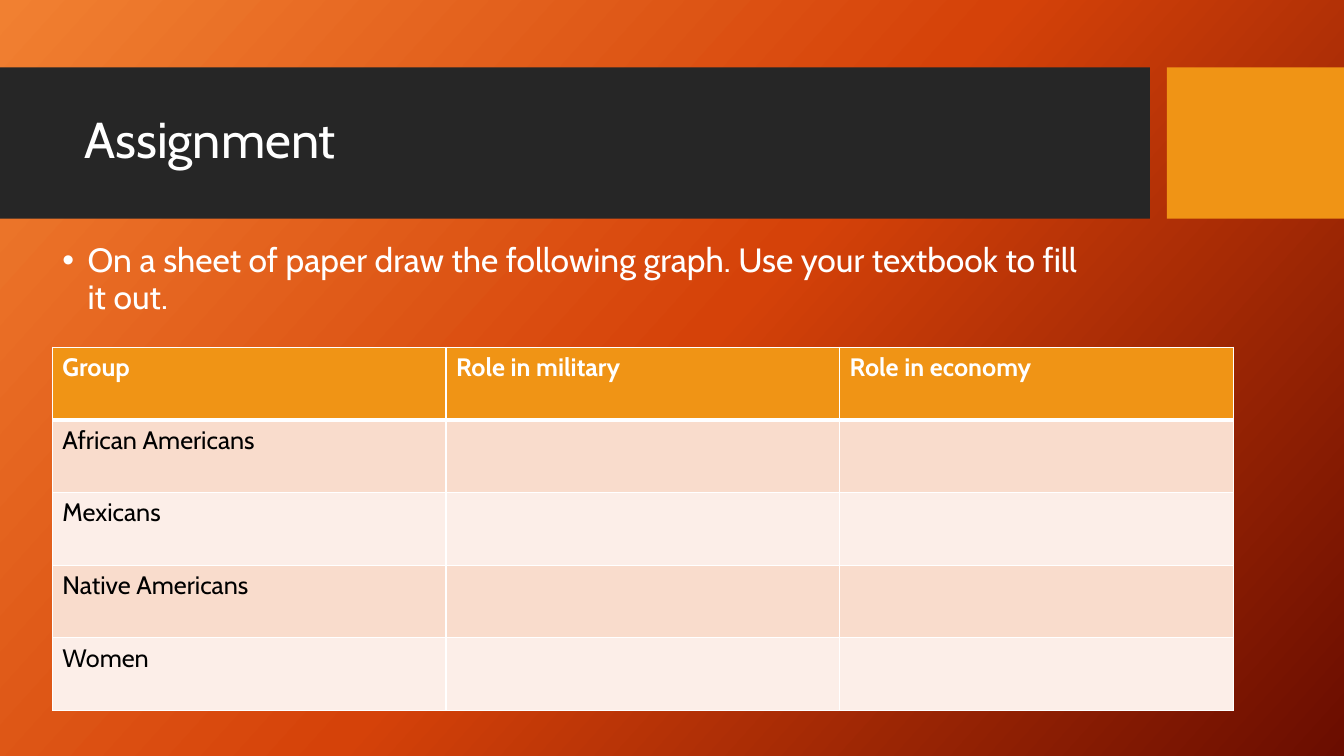
from lxml.etree import SubElement
from pptx import Presentation
from pptx.dml.color import RGBColor
from pptx.enum.shapes import MSO_SHAPE
from pptx.enum.text import MSO_ANCHOR
from pptx.oxml import parse_xml
from pptx.oxml.ns import nsdecls, qn
from pptx.util import Cm, Pt

TITLE = "Assignment"
TASK = "On a sheet of paper draw the following graph. Use your textbook to fill it out."
ROWS = [
    ("Group", "Role in military", "Role in economy"),
    ("African Americans", "", ""),
    ("Mexicans", "", ""),
    ("Native Americans", "", ""),
    ("Women", "", ""),
]
FONT = "Cabin"
COLORS = {
    "white": "FFFFFF", "black": "000000", "band": "262626", "accent": "F09415",
    "odd": "F9DCCC", "even": "FCEEE8",
}
GRADIENT = [(0, "F18031"), (50, "D54209"), (100, "6A0D00")]
GRADIENT_ANGLE = 42
SLIDE_W, SLIDE_H = 33.87, 19.05
BAND_TOP, BAND_H, BAND_W, ACCENT_X = 1.7, 3.81, 28.98, 29.41
TABLE_X, TABLE_Y, COL_W, ROW_H = 1.32, 8.75, 9.92, 1.83


def color(name):
    return RGBColor.from_string(COLORS[name])


def add_run(p, text, size, name, bold=False):
    r = p.add_run()
    r.text = text
    r.font.size = Pt(size)
    r.font.name = FONT
    r.font.bold = bold
    r.font.color.rgb = color(name)


def add_text(s, box, text, size, anchor):
    tf = s.shapes.add_textbox(*map(Cm, box)).text_frame
    tf.word_wrap = True
    tf.vertical_anchor = anchor
    p = tf.paragraphs[0]
    p.line_spacing = 0.9
    add_run(p, text, size, "white")
    return p


def add_bullet(p):
    pPr = p._p.get_or_add_pPr()
    pPr.set("marL", str(Cm(0.64)))
    pPr.set("indent", str(-Cm(0.64)))
    SubElement(pPr, qn("a:buFont")).set("typeface", "Arial")
    SubElement(pPr, qn("a:buChar")).set("char", "•")


def set_background(s):
    s.background.fill.gradient()
    grad = s.element.find(".//" + qn("a:gradFill"))
    stops = grad.find(qn("a:gsLst"))
    for gs in list(stops):
        stops.remove(gs)
    for pos, rgb in GRADIENT:
        gs = SubElement(stops, qn("a:gs"))
        gs.set("pos", str(pos * 1000))
        SubElement(gs, qn("a:srgbClr")).set("val", rgb)
    grad.find(qn("a:lin")).set("ang", str(GRADIENT_ANGLE * 60000))


def set_borders(cell, widths):
    tcPr = cell._tc.get_or_add_tcPr()
    for i, (side, width) in enumerate(widths.items()):
        tcPr.insert(i, parse_xml(
            f'<a:ln{side} {nsdecls("a")} w="{Pt(width)}"><a:solidFill>'
            f'<a:srgbClr val="{COLORS["white"]}"/></a:solidFill></a:ln{side}>'))


def add_grid(s):
    n_rows, n_cols = len(ROWS), len(ROWS[0])
    table = s.shapes.add_table(
        n_rows, n_cols, Cm(TABLE_X), Cm(TABLE_Y),
        Cm(COL_W * n_cols), Cm(ROW_H * n_rows)).table
    for col in table.columns:
        col.width = Cm(COL_W)
    for i, texts in enumerate(ROWS):
        table.rows[i].height = Cm(ROW_H)
        head = i == 0
        fill = "accent" if head else ("even", "odd")[i % 2]
        for j, text in enumerate(texts):
            cell = table.cell(i, j)
            cell.fill.solid()
            cell.fill.fore_color.rgb = color(fill)
            set_borders(cell, {"L": 1, "R": 1, "T": 3 if i == 1 else 1, "B": 3 if head else 1})
            if text:
                add_run(cell.text_frame.paragraphs[0], text, 18, "white" if head else "black", head)


def main():
    prs = Presentation()
    prs.slide_width, prs.slide_height = Cm(SLIDE_W), Cm(SLIDE_H)
    s = prs.slides.add_slide(prs.slide_layouts[6])
    set_background(s)
    for x, w, name in [(0, BAND_W, "band"), (ACCENT_X, SLIDE_W - ACCENT_X, "accent")]:
        sp = s.shapes.add_shape(MSO_SHAPE.RECTANGLE, Cm(x), Cm(BAND_TOP), Cm(w), Cm(BAND_H))
        sp.shadow.inherit = False
        sp.fill.solid()
        sp.fill.fore_color.rgb = color(name)
        sp.line.fill.background()
    add_text(s, (1.88, 2.08, 26.7, 3), TITLE, 36, MSO_ANCHOR.MIDDLE)
    add_bullet(add_text(s, (TABLE_X, 6.02, 26.7, 10), TASK, 24, MSO_ANCHOR.TOP))
    add_grid(s)
    prs.save("out.pptx")


if __name__ == "__main__":
    main()
